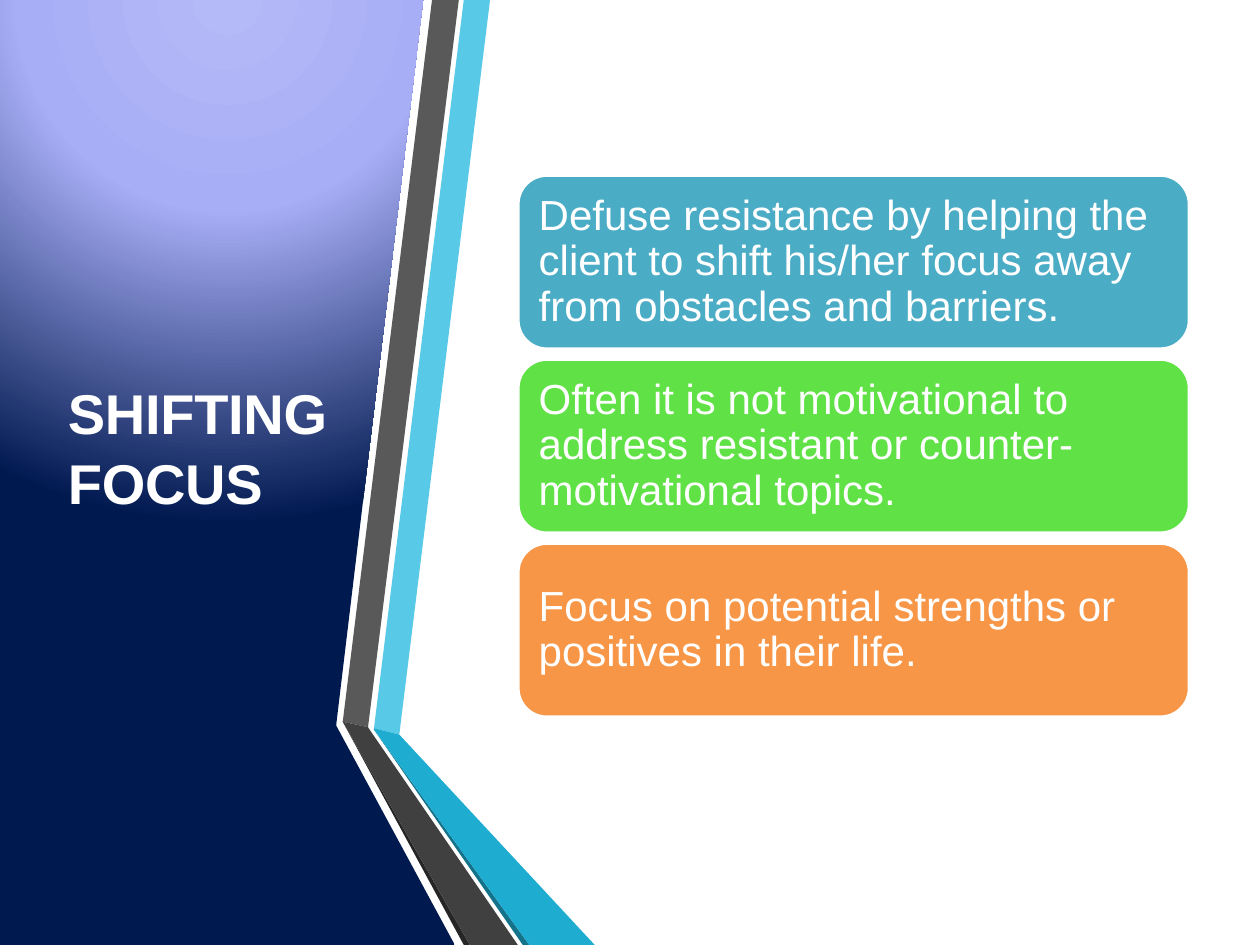
from dataclasses import dataclass

from lxml.etree import SubElement
from pptx import Presentation
from pptx.dml.color import RGBColor
from pptx.enum.shapes import MSO_SHAPE
from pptx.enum.text import MSO_ANCHOR, PP_ALIGN
from pptx.oxml.ns import qn
from pptx.util import Cm, Pt


@dataclass(frozen=True)
class Theme:
    font: str = "Arial"
    title_size: int = 32
    card_size: int = 24
    white: str = "FFFFFF"
    sky: str = "58C9E7"
    cyan: str = "1EACD1"
    teal: str = "14728B"
    gray: str = "595959"
    charcoal: str = "404040"
    black: str = "262626"
    card_blue: str = "4BACC6"
    card_green: str = "60E146"
    card_orange: str = "F79646"
    panel_stops: tuple = ((0, "B4B9F7"), (40, "A8AEF6"), (100, "00194F"))


class SlideBuilder:
    def __init__(self, page, theme):
        self.page = page
        self.theme = theme

    def paint(self, shape, color):
        shape.shadow.inherit = False
        shape.fill.solid()
        shape.fill.fore_color.rgb = RGBColor.from_string(color)
        shape.line.fill.background()

    def polygon(self, points, color):
        (first_x, first_y), *rest = [(Cm(x), Cm(y)) for x, y in points]
        builder = self.page.shapes.build_freeform(first_x, first_y)
        builder.add_line_segments(rest, close=True)
        shape = builder.convert_to_shape()
        self.paint(shape, color)
        return shape

    def glow_panel(self, points):
        shape = self.polygon(points, self.theme.white)
        shape.fill.gradient()
        gradient = shape.element.spPr.find(qn("a:gradFill"))
        for child in list(gradient):
            gradient.remove(child)
        stops = SubElement(gradient, qn("a:gsLst"))
        for percent, color in self.theme.panel_stops:
            stop = SubElement(stops, qn("a:gs"), pos=str(percent * 1000))
            SubElement(stop, qn("a:srgbClr"), val=color)
        circle = SubElement(gradient, qn("a:path"), path="circle")
        SubElement(circle, qn("a:fillToRect"), l="50000", t="-80000", r="50000", b="180000")

    def style_text(self, box, text, size, spacing, bold=False):
        frame = box.text_frame
        frame.text = text
        frame.word_wrap = True
        frame.vertical_anchor = MSO_ANCHOR.MIDDLE
        para = frame.paragraphs[0]
        para.alignment = PP_ALIGN.LEFT
        para.line_spacing = spacing
        span = para.runs[0]
        span.font.name = self.theme.font
        span.font.size = Pt(size)
        span.font.bold = bold
        span.font.color.rgb = RGBColor.from_string(self.theme.white)
        return span

    def title(self, text, left, top, width, height):
        box = self.page.shapes.add_textbox(Cm(left), Cm(top), Cm(width), Cm(height))
        span = self.style_text(box, text, self.theme.title_size, 1.04, bold=True)
        span.font._element.set("spc", "-20")

    def card(self, text, color, left, top, width, height):
        box = self.page.shapes.add_shape(
            MSO_SHAPE.ROUNDED_RECTANGLE, Cm(left), Cm(top), Cm(width), Cm(height))
        self.paint(box, color)
        box.line.color.rgb = RGBColor.from_string(self.theme.white)
        box.line.width = Pt(2)
        frame = box.text_frame
        frame.margin_left = frame.margin_right = Cm(0.25)
        frame.margin_top = frame.margin_bottom = Cm(0.25)
        self.style_text(box, text, self.theme.card_size, 0.9)


def main():
    theme = Theme()
    deck = Presentation()
    deck.slide_width, deck.slide_height = Cm(25.4), Cm(19.05)
    slide = SlideBuilder(deck.slides.add_slide(deck.slide_layouts[6]), theme)
    bottom = 19.05

    slide.glow_panel([(0, 0), (8.53, 0), (6.78, 14.6), (6.78, 14.63), (9.17, bottom), (0, bottom)])
    ribbons = [
        (theme.sky, [(7.54, 14.68), (8.05, 14.81), (9.88, 0), (9.35, 0)]),
        (theme.gray, [(9.25, 0), (8.71, 0), (6.91, 14.55), (7.42, 14.66)]),
        (theme.black, [(6.91, 14.55), (9.35, bottom), (9.47, bottom)]),
        (theme.teal, [(7.54, 14.71), (10.54, bottom), (10.67, bottom)]),
        (theme.cyan, [(7.54, 14.71), (10.67, bottom), (11.99, bottom), (8.05, 14.81), (7.54, 14.68)]),
        (theme.charcoal, [(10.44, bottom), (7.52, 14.81), (7.42, 14.66), (6.91, 14.55), (9.47, bottom)]),
    ]
    for color, points in ribbons:
        slide.polygon(points, color)

    slide.title("SHIFTING FOCUS", 1.12, 1.9, 5.8, 14.17)

    cards = [
        (theme.card_blue, "Defuse resistance by helping the client to shift his/her focus "
                          "away from obstacles and barriers."),
        (theme.card_green, "Often it is not motivational to address resistant or "
                           "counter-motivational topics."),
        (theme.card_orange, "Focus on potential strengths or positives in their life."),
    ]
    for index, (color, text) in enumerate(cards):
        slide.card(text, color, 10.44, 3.53 + 3.71 * index, 13.54, 3.51)

    deck.save("out.pptx")


if __name__ == "__main__":
    main()
